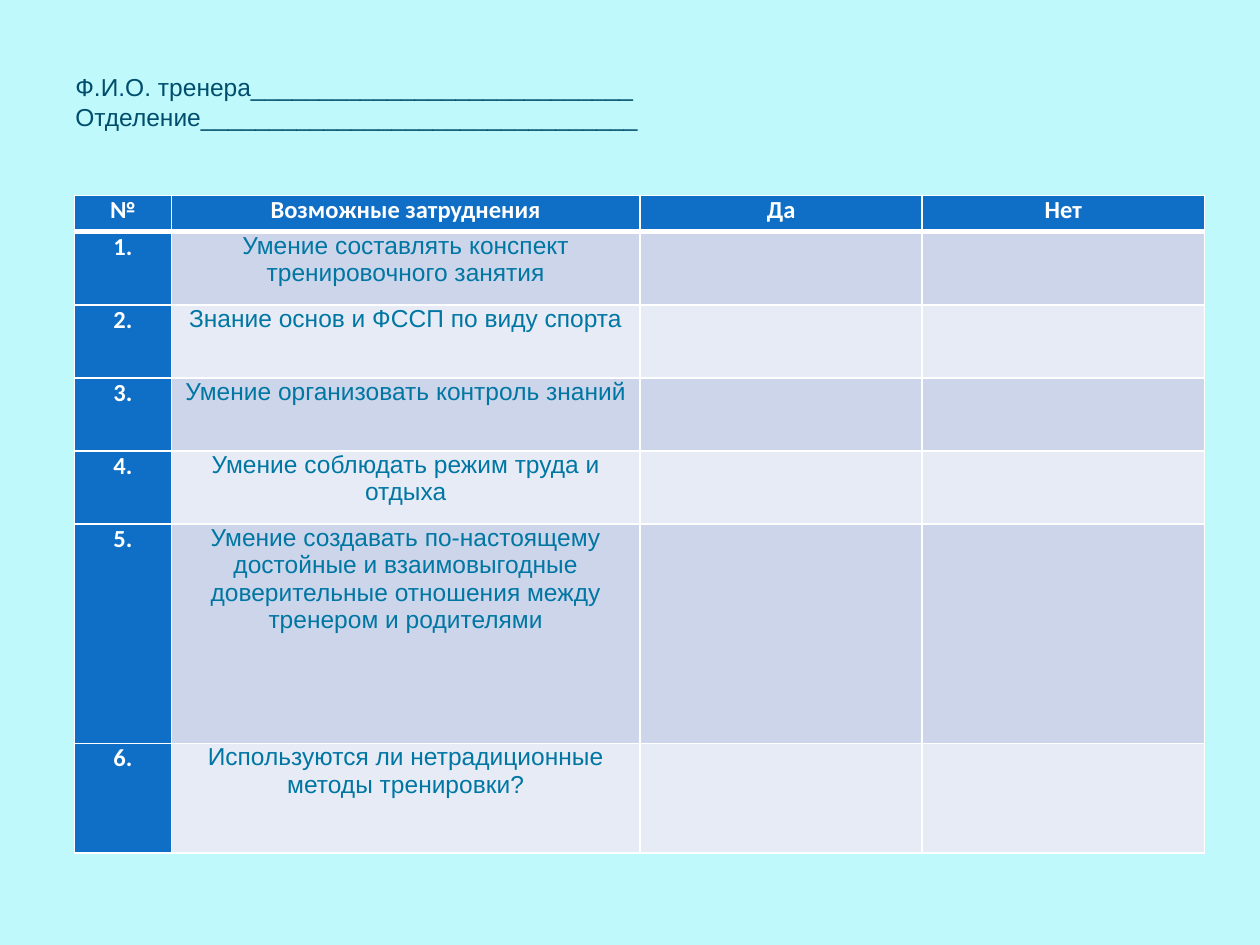
from dataclasses import dataclass

from lxml.etree import SubElement
from pptx import Presentation
from pptx.dml.color import RGBColor
from pptx.enum.text import MSO_ANCHOR, PP_ALIGN
from pptx.oxml.ns import qn
from pptx.util import Inches, Pt


@dataclass(frozen=True)
class Theme:
    background: str = "BFF9FC"
    heading: str = "004E6C"
    accent: str = "0F6FC6"
    body: str = "0076A3"
    white: str = "FFFFFF"
    bands: tuple[str, str] = ("CCD5EA", "E7EBF5")
    text_size: float = 14
    line_pitch: float = 17
    body_font: str = "Arial"
    label_font: str = "Calibri"
    thin: float = 1
    thick: float = 3


@dataclass(frozen=True)
class Difficulty:
    text: str
    height: float


THEME = Theme()
SLIDE_WIDTH, SLIDE_HEIGHT = 10, 7.5
FORM_LINES = ("Ф.И.О. тренера" + "_" * 28, "Отделение" + "_" * 32)
HEADERS = ("№", "Возможные затруднения", "Да", "Нет")
COLUMN_WIDTHS = (0.77, 3.72, 2.24, 2.24)
HEADER_HEIGHT = 0.29
DIFFICULTIES = (
    Difficulty("Умение составлять конспект тренировочного занятия", 2),
    Difficulty("Знание основ и ФССП по виду спорта", 2),
    Difficulty("Умение организовать контроль знаний", 2),
    Difficulty("Умение соблюдать режим труда и отдыха", 2),
    Difficulty("Умение создавать по-настоящему достойные и взаимовыгодные "
               "доверительные отношения между тренером и родителями", 6),
    Difficulty("Используются ли нетрадиционные методы тренировки?", 3),
)


def style_font(font, name: str, color: str, bold: bool = False) -> None:
    font.name = name
    font.size = Pt(THEME.text_size)
    font.bold = bold
    font.color.rgb = RGBColor.from_string(color)


def add_borders(cell, top: float, bottom: float) -> None:
    """Draw white cell edges; widths are in points."""
    properties = cell._tc.get_or_add_tcPr()
    widths = {"a:lnL": THEME.thin, "a:lnR": THEME.thin, "a:lnT": top, "a:lnB": bottom}
    for tag, width in widths.items():
        line = SubElement(properties, qn(tag), w=str(Pt(width)))
        fill = SubElement(line, qn("a:solidFill"))
        SubElement(fill, qn("a:srgbClr"), val=THEME.white)


def fill_cell(cell, row: int, column: int, text: str) -> None:
    is_label = row == 0 or column == 0
    add_borders(cell,
                top=THEME.thick if row == 1 else THEME.thin,
                bottom=THEME.thick if row == 0 else THEME.thin)
    cell.fill.solid()
    color = THEME.accent if is_label else THEME.bands[(row - 1) % 2]
    cell.fill.fore_color.rgb = RGBColor.from_string(color)
    cell.margin_left = cell.margin_right = Inches(0.07)
    cell.margin_top = cell.margin_bottom = 0
    para = cell.text_frame.paragraphs[0]
    para.text = text
    para.alignment = PP_ALIGN.CENTER
    if is_label:
        style_font(para.font, THEME.label_font, THEME.white, bold=True)
    else:
        style_font(para.font, THEME.body_font, THEME.body)


def add_form_heading(page) -> None:
    box = page.shapes.add_textbox(
        Inches(SLIDE_WIDTH * 0.05), Inches(SLIDE_HEIGHT * 0.04),
        Inches(SLIDE_WIDTH * 0.9), Inches(1.25))
    frame = box.text_frame
    frame.word_wrap = True
    frame.vertical_anchor = MSO_ANCHOR.MIDDLE
    frame.margin_bottom = Inches(0.05) + Pt(THEME.line_pitch)
    para = frame.paragraphs[0]
    para.text = "\v".join(FORM_LINES)
    para.line_spacing = Pt(THEME.line_pitch)
    style_font(para.font, THEME.body_font, THEME.heading)


def add_difficulty_table(page) -> None:
    heights = [HEADER_HEIGHT] + [item.height * HEADER_HEIGHT for item in DIFFICULTIES]
    contents = [HEADERS] + [(f"{number}.", item.text, "", "")
                            for number, item in enumerate(DIFFICULTIES, start=1)]
    table = page.shapes.add_table(
        len(contents), len(HEADERS), Inches(0.59), Inches(1.55),
        Inches(sum(COLUMN_WIDTHS)), Inches(sum(heights))).table
    for column, width in zip(table.columns, COLUMN_WIDTHS):
        column.width = Inches(width)
    for row, height in zip(table.rows, heights):
        row.height = Inches(height)
    for row, texts in enumerate(contents):
        for column, text in enumerate(texts):
            fill_cell(table.cell(row, column), row, column, text)


def main() -> None:
    deck = Presentation()
    deck.slide_width, deck.slide_height = Inches(SLIDE_WIDTH), Inches(SLIDE_HEIGHT)
    page = deck.slides.add_slide(deck.slide_layouts[6])
    page.background.fill.solid()
    page.background.fill.fore_color.rgb = RGBColor.from_string(THEME.background)
    add_form_heading(page)
    add_difficulty_table(page)
    deck.save("out.pptx")


if __name__ == "__main__":
    main()
